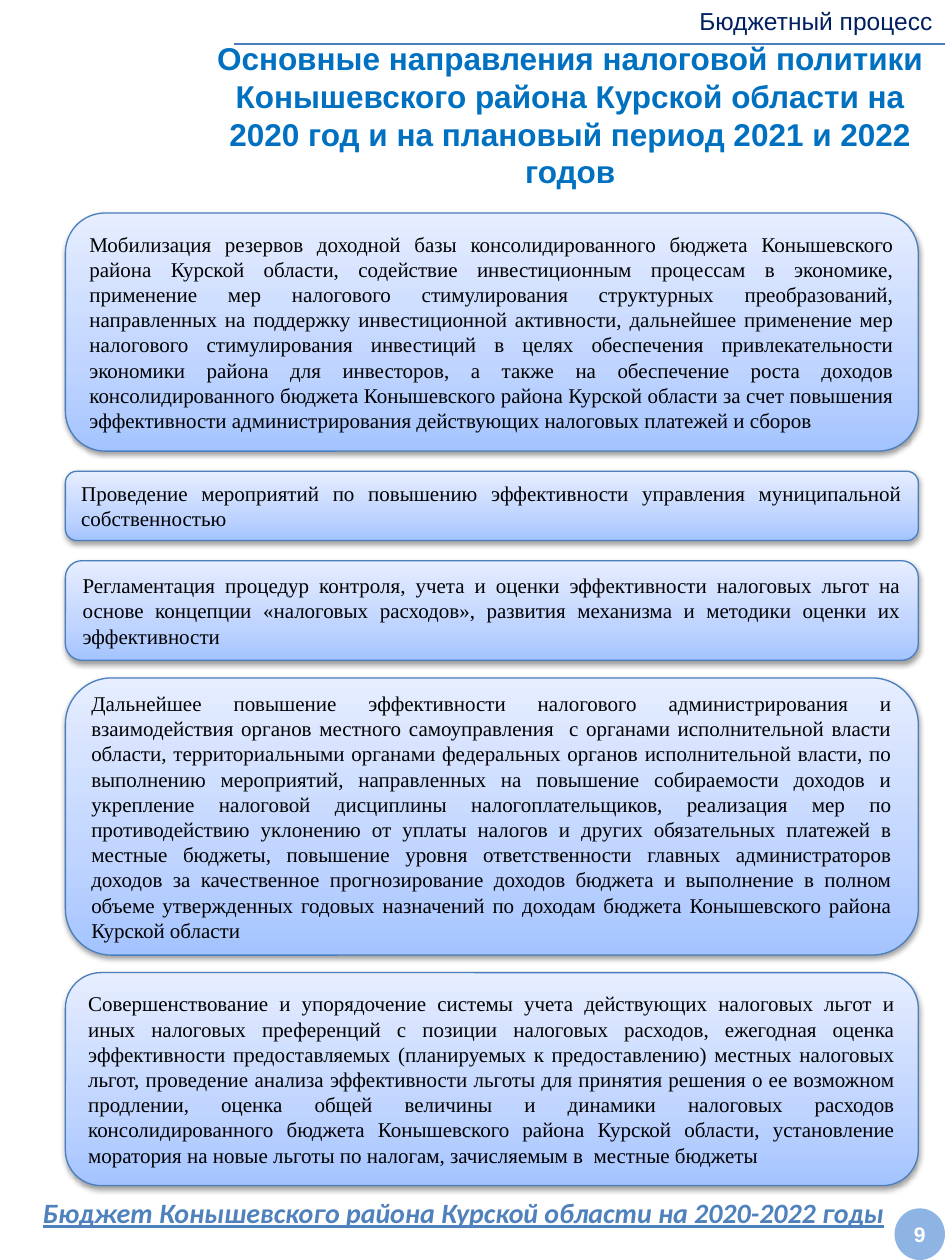
from dataclasses import dataclass

from copy import deepcopy
from lxml import etree
from pptx import Presentation
from pptx.dml.color import RGBColor
from pptx.enum import shapes as sh, text as tx
from pptx.oxml.ns import qn
from pptx.util import Pt


@dataclass(frozen=True)
class Theme:
    title: str = "0070C0"
    head: str = "002060"
    foot: str = "4F81BD"
    edge: str = "4B7EBC"
    badge: str = "8EB4E3"
    body: str = "000000"
    light: str = "FFFFFF"
    grad: tuple = ((0, "A4C4FF"), (0.35, "BFD4FF"), (1, "E6EEFF"))
    sans: str = "Arial"
    serif: str = "Times New Roman"
    round: str = "Calibri"
    big: int = 18
    mid: int = 16
    small: int = 14
    base: int = 12


T = Theme()
A = tx.PP_ALIGN
MID = tx.MSO_ANCHOR.MIDDLE

GOALS = [
    (121.7, 136.1, "Мобилизация резервов доходной базы консолидированного бюджета Конышевского района Курской области, содействие инвестиционным процессам в экономике, применение мер налогового стимулирования структурных преобразований, направленных на поддержку инвестиционной активности, дальнейшее применение мер налогового стимулирования инвестиций в целях обеспечения привлекательности экономики района для инвесторов, а также на обеспечение роста доходов консолидированного бюджета Конышевского района Курской области за счет повышения эффективности администрирования действующих налоговых платежей и сборов"),
    (269.3, 39.6, "Проведение мероприятий по повышению эффективности управления муниципальной собственностью"),
    (320.4, 56.9, "Регламентация процедур контроля, учета и оценки эффективности налоговых льгот на основе концепции «налоговых расходов», развития механизма и методики оценки их эффективности"),
    (387.4, 158.4, "Дальнейшее повышение эффективности налогового администрирования и взаимодействия органов местного самоуправления  с органами исполнительной власти области, территориальными органами федеральных органов исполнительной власти, по выполнению мероприятий, направленных на повышение собираемости доходов и укрепление налоговой дисциплины налогоплательщиков, реализация мер по противодействию уклонению от уплаты налогов и других обязательных платежей в местные бюджеты, повышение уровня ответственности главных администраторов доходов за качественное прогнозирование доходов бюджета и выполнение в полном объеме утвержденных годовых назначений по доходам бюджета Конышевского района Курской области"),
    (555.8, 121.7, "Совершенствование и упорядочение системы учета действующих налоговых льгот и иных налоговых преференций с позиции налоговых расходов, ежегодная оценка эффективности предоставляемых (планируемых к предоставлению) местных налоговых льгот, проведение анализа эффективности льготы для принятия решения о ее возможном продлении, оценка общей величины и динамики налоговых расходов консолидированного бюджета Конышевского района Курской области, установление моратория на новые льготы по налогам, зачисляемым в  местные бюджеты"),
]


def rgb(code):
    return RGBColor.from_string(code)


def write(shape, words, font=T.sans, size=T.base, color=T.body, align=A.LEFT,
          anchor=tx.MSO_ANCHOR.TOP, wrap=True, bold=False, italic=False, under=False):
    frame = shape.text_frame
    frame.word_wrap = wrap
    frame.vertical_anchor = anchor
    para = frame.paragraphs[0]
    para.alignment = align
    run = para.add_run()
    run.text = words
    face = run.font
    face.name, face.size, face.color.rgb = font, Pt(size), rgb(color)
    face.bold, face.italic, face.underline = bold, italic, under


def label(slide, box, words, **style):
    write(slide.shapes.add_textbox(*map(Pt, box)), words, **style)


def shade(shape):
    fill = shape.fill
    fill.gradient()
    fill.gradient_angle = 90
    stop = next(shape._element.spPr.iter(qn("a:gs")))
    stop.addnext(deepcopy(stop))
    for part, (place, color) in zip(fill.gradient_stops, T.grad):
        part.position = place
        part.color.rgb = rgb(color)


def drop(shape):
    shape.shadow.inherit = False
    list_ = shape._element.spPr.find(qn("a:effectLst"))
    cast = etree.SubElement(list_, qn("a:outerShdw"), blurRad=str(Pt(3.1)),
                            dist=str(Pt(1.6)), dir="5400000", rotWithShape="0")
    tone = etree.SubElement(cast, qn("a:srgbClr"), val="000000")
    etree.SubElement(tone, qn("a:alpha"), val="38000")


def header(slide, box):
    left, top, width, height = box
    line = slide.shapes.add_connector(sh.MSO_CONNECTOR.STRAIGHT, Pt(left), Pt(top + 25.2),
                                      Pt(left + width), Pt(top + 25.2))
    line.line.color.rgb = rgb(T.edge)
    line.line.width = Pt(0.75)
    etree.SubElement(line._element.spPr, qn("a:effectLst"))
    label(slide, (left + 17.3, top, width - 17.3, 24.2), "Бюджетный процесс",
          size=T.small, color=T.head, align=A.RIGHT)
    label(slide, (left - 22.3, top + 20.2, width + 22.3, height - 20.2),
          "Основные направления налоговой политики Конышевского района Курской области "
          "на 2020 год и на плановый период 2021 и 2022 годов",
          size=T.big, color=T.title, align=A.CENTER, anchor=MID, bold=True)


def goals(slide, left, width):
    for top, height, words in GOALS:
        card = slide.shapes.add_shape(sh.MSO_SHAPE.ROUNDED_RECTANGLE,
                                      *map(Pt, (left, top, width, height)))
        shade(card)
        card.line.color.rgb = rgb(T.edge)
        card.line.width = Pt(0.75)
        drop(card)
        write(card, words, font=T.serif, align=A.JUSTIFY, anchor=MID)


def footer(slide, box):
    left, top, width, height = box
    label(slide, (left, top, 502.6, height),
          "Бюджет Конышевского района Курской области на 2020-2022 годы",
          font=T.round, size=T.mid, color=T.foot, wrap=False,
          bold=True, italic=True, under=True)
    badge = slide.shapes.add_shape(sh.MSO_SHAPE.OVAL, Pt(left + width - 28.8),
                                   Pt(top + height - 29.5), Pt(28.8), Pt(29.5))
    badge.shadow.inherit = False
    badge.fill.solid()
    badge.fill.fore_color.rgb = rgb(T.badge)
    badge.line.fill.background()
    frame = badge.text_frame
    frame.margin_left = frame.margin_right = Pt(2.9)
    write(badge, "9", color=T.light, align=A.CENTER, anchor=MID, bold=True)


def main():
    deck = Presentation()
    deck.slide_width, deck.slide_height = Pt(540), Pt(720)
    slide = deck.slides.add_slide(deck.slide_layouts[6])
    header(slide, (133.9, 0, 406.1, 110.9))
    goals(slide, 37.4, 487.4)
    footer(slide, (17.3, 679.7, 522.7, 40.3))
    deck.save("out.pptx")


if __name__ == "__main__":
    main()
